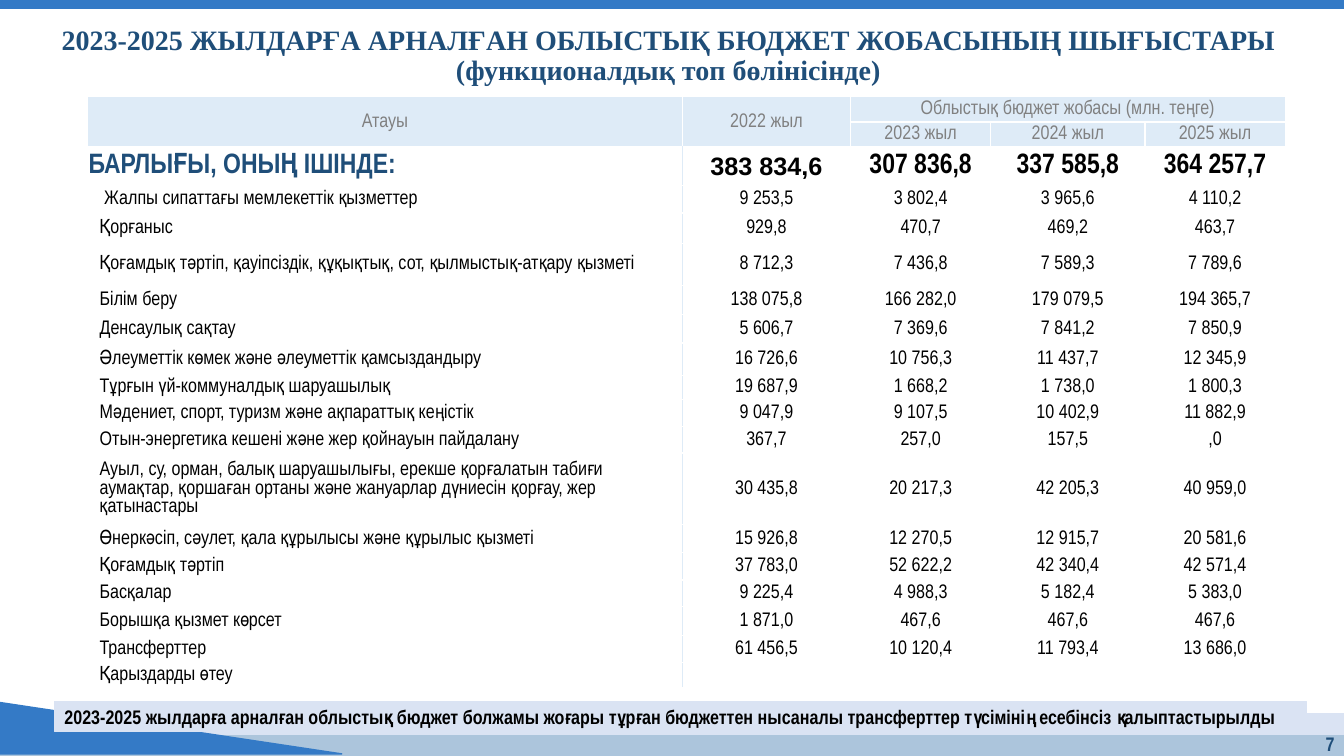
from lxml.etree import SubElement
from pptx import Presentation
from pptx.dml.color import RGBColor
from pptx.enum.shapes import MSO_SHAPE
from pptx.enum.text import MSO_ANCHOR, PP_ALIGN
from pptx.oxml.ns import qn
from pptx.util import Pt

HUES = {
    "blue": "347AC6", "steel": "ACC5DC", "pale": "DAE3F3", "navy": "1F4E79",
    "head": "DEEBF7", "gray": "808080", "black": "000000", "white": "FFFFFF",
}
NARROW = "Arial Narrow"
FONTS = {
    "title": ({"name": "Times New Roman", "size": Pt(20), "bold": True}, "navy"),
    "head": ({"name": NARROW, "size": Pt(14), "bold": False}, "gray"),
    "label": ({"name": NARROW, "size": Pt(20), "bold": True}, "navy"),
    "first": ({"name": "Arial", "size": Pt(18), "bold": True}, "black"),
    "total": ({"name": NARROW, "size": Pt(20), "bold": True}, "black"),
    "body": ({"name": NARROW, "size": Pt(14), "bold": False}, "black"),
    "page": ({"name": NARROW, "size": Pt(14), "bold": True}, "navy"),
    "note": ({"name": NARROW, "size": Pt(14), "bold": True}, "black"),
}
LEFT, MID, RIGHT = PP_ALIGN.LEFT, PP_ALIGN.CENTER, PP_ALIGN.RIGHT


def write(frame, text, kind, align, space=None):
    style, hue = FONTS[kind]
    frame.word_wrap = True
    frame.vertical_anchor = MSO_ANCHOR.MIDDLE
    frame.text = text
    para = frame.paragraphs[0]
    for key, value in {"alignment": align, "line_spacing": space}.items():
        setattr(para, key, value)
    for run in para.runs:
        for key, value in style.items():
            setattr(run.font, key, value)
        run.font.color.rgb = RGBColor.from_string(HUES[hue])
    if not text:
        size = str(int(style["size"].pt * 100))
        SubElement(para._p, qn("a:endParaRPr"), sz=size)


def block(form, hue, *place):
    shape = slide.shapes.add_shape(form, *[Pt(n) for n in place])
    shape.shadow.inherit = False
    shape.fill.solid()
    for part in (shape.fill.fore_color, shape.line.color):
        part.rgb = RGBColor.from_string(HUES[hue])
    shape.line.width = Pt(1)
    return shape


deck = Presentation()
deck.slide_width, deck.slide_height = Pt(960), Pt(540)
slide = deck.slides.add_slide(deck.slide_layouts[6])

block(MSO_SHAPE.RECTANGLE, "steel", 0, 523.4, 960, 16.6)
block(MSO_SHAPE.RECTANGLE, "pale", 0, 509.8, 960, 14.4)
block(MSO_SHAPE.RIGHT_TRIANGLE, "blue", 0, 501.8, 244.1, 36.7)

title = slide.shapes.add_textbox(Pt(10.1), Pt(15.1), Pt(934.6), Pt(50.4))
write(title.text_frame,
      "2023-2025 ЖЫЛДАРҒА АРНАЛҒАН ОБЛЫСТЫҚ БЮДЖЕТ ЖОБАСЫНЫҢ ШЫҒЫСТАРЫ\v"
      "(функционалдық топ бөлінісінде)", "title", MID, 0.9)
block(MSO_SHAPE.RECTANGLE, "blue", 0, -1.4, 960, 7.2)

ROWS = [
    (18, "Атауы", "2022 жыл", "Облыстық бюджет жобасы (млн. теңге)", "", ""),
    (16.6, "", "", "2023 жыл", "2024 жыл", "2025 жыл"),
    (28.1, "БАРЛЫҒЫ, ОНЫҢ ІШІНДЕ:", "383 834,6", "307 836,8", "337 585,8", "364 257,7"),
    (19.4, " Жалпы сипаттағы мемлекеттік қызметтер", "9 253,5", "3 802,4", "3 965,6", "4 110,2"),
    (21.6, "Қорғаныс", "929,8", "470,7", "469,2", "463,7"),
    (30.2, "Қоғамдық тәртіп, қауіпсіздік, құқықтық, сот, қылмыстық-атқару қызметі",
     "8 712,3", "7 436,8", "7 589,3", "7 789,6"),
    (20.9, "Білім беру", "138 075,8", "166 282,0", "179 079,5", "194 365,7"),
    (20.2, "Денсаулық сақтау", "5 606,7", "7 369,6", "7 841,2", "7 850,9"),
    (23, "Әлеуметтiк көмек және әлеуметтiк қамсыздандыру",
     "16 726,6", "10 756,3", "11 437,7", "12 345,9"),
    (17.3, "Тұрғын үй-коммуналдық шаруашылық", "19 687,9", "1 668,2", "1 738,0", "1 800,3"),
    (19.4, "Мәдениет, спорт, туризм және ақпараттық кеңістiк",
     "9 047,9", "9 107,5", "10 402,9", "11 882,9"),
    (18.7, "Отын-энергетика кешенi және жер қойнауын пайдалану",
     "367,7", "257,0", "157,5", ",0"),
    (50.4, "Ауыл, су, орман, балық шаруашылығы, ерекше қорғалатын табиғи аумақтар, "
     "қоршаған ортаны және жануарлар дүниесін қорғау, жер қатынастары",
     "30 435,8", "20 217,3", "42 205,3", "40 959,0"),
    (20.2, "Өнеркәсіп, сәулет, қала құрылысы және құрылыс қызметі",
     "15 926,8", "12 270,5", "12 915,7", "20 581,6"),
    (19.4, "Қоғамдық тәртіп", "37 783,0", "52 622,2", "42 340,4", "42 571,4"),
    (18.7, "Басқалар", "9 225,4", "4 988,3", "5 182,4", "5 383,0"),
    (20.9, "Борышқа қызмет көрсет", "1 871,0", "467,6", "467,6", "467,6"),
    (19.4, "Трансферттер", "61 456,5", "10 120,4", "11 793,4", "13 686,0"),
    (18, "Қарыздарды өтеу", "", "", "", ""),
]
WIDTHS = [424.8, 120.2, 100.1, 110.2, 100.1]
high = sum(row[0] for row in ROWS)
table = slide.shapes.add_table(len(ROWS), len(WIDTHS), Pt(62.6), Pt(69.1),
                               Pt(sum(WIDTHS)), Pt(high)).table
table.first_row = table.horz_banding = False
for col, width in zip(table.columns, WIDTHS):
    col.width = Pt(width)

for r, (tall, *texts) in enumerate(ROWS):
    table.rows[r].height = Pt(tall)
    for c, text in enumerate(texts):
        cell = table.cell(r, c)
        inset = 8.6 if r > 2 and c == 0 else 0.7
        edges = {"margin_left": Pt(inset), "margin_top": Pt(0.7),
                 "margin_right": Pt(0.7), "margin_bottom": Pt(0),
                 "vertical_anchor": MSO_ANCHOR.MIDDLE}
        for key, value in edges.items():
            setattr(cell, key, value)
        if r < 2:
            kind, sides = "head", dict.fromkeys(("lnL", "lnR", "lnT", "lnB"), "white")
        else:
            kind = "body" if r > 2 else ("label", "first", "total")[min(c, 2)]
            sides = {0: {"lnR": "head"}, 1: {"lnL": "head"}}.get(c, {})
        write(cell.text_frame, text, kind, LEFT if r > 1 and c == 0 else MID)
        for side, hue in sides.items():
            line = SubElement(cell._tc.get_or_add_tcPr(), qn("a:" + side), w="12700")
            SubElement(SubElement(line, qn("a:solidFill")), qn("a:srgbClr"), val=HUES[hue])
        if r < 2:
            cell.fill.solid()
            cell.fill.fore_color.rgb = RGBColor.from_string(HUES["head"])
        else:
            cell.fill.background()

for top, left, low, right in [(0, 0, 1, 0), (0, 1, 1, 1), (0, 2, 0, 4)]:
    table.cell(top, left).merge(table.cell(low, right))

page = slide.shapes.add_textbox(Pt(908.6), Pt(522.7), Pt(51.8), Pt(19.4))
write(page.text_frame, "7", "page", RIGHT, 0.9)

note = block(MSO_SHAPE.RECTANGLE, "pale", 38.9, 501.1, 894.2, 21.6)
write(note.text_frame,
      "2023-2025 жылдарға арналған облыстық бюджет болжамы жоғары тұрған бюджеттен "
      "нысаналы трансферттер түсімінің есебінсіз қалыптастырылды", "note", LEFT)

deck.save("out.pptx")
